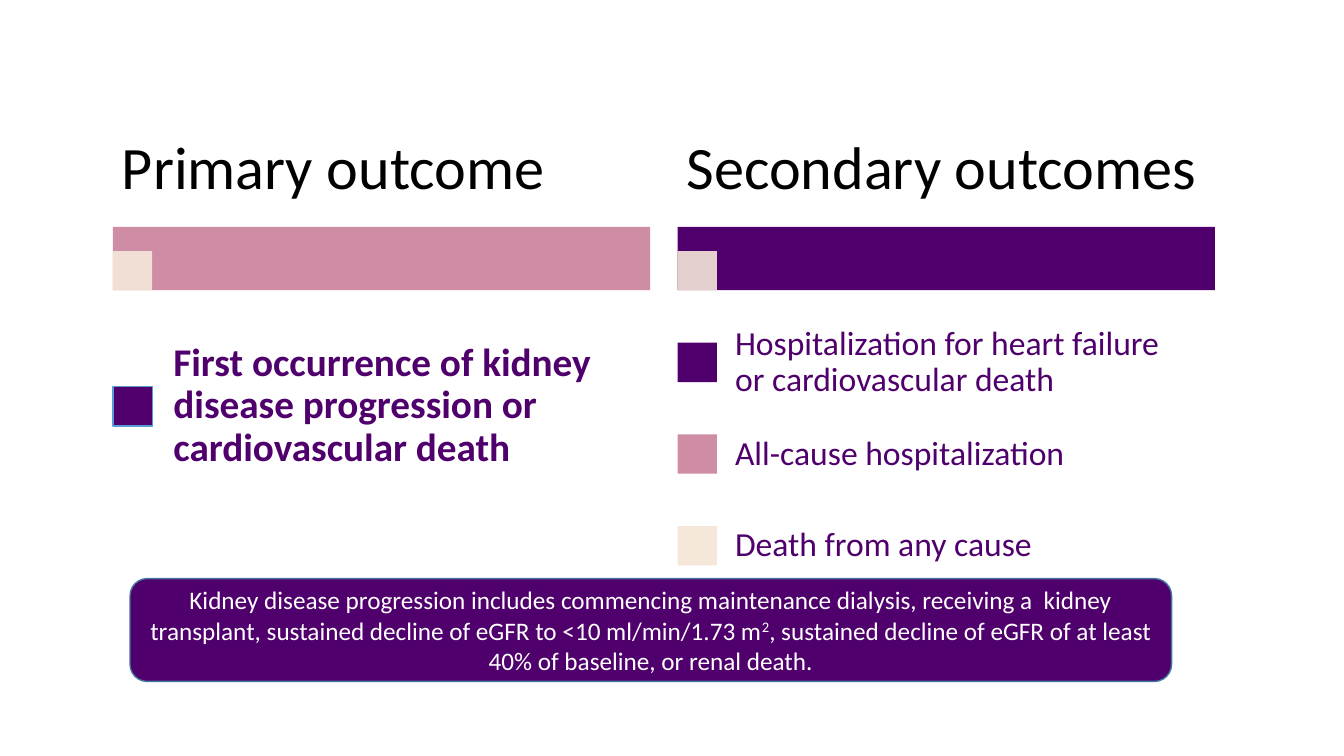
from lxml import etree
from pptx import Presentation
from pptx.dml.color import RGBColor
from pptx.enum import shapes, text
from pptx.oxml.ns import qn
from pptx.util import Inches, Pt

PURPLE = RGBColor(0x50, 0x00, 0x6C)
PINK = RGBColor(0xCE, 0x8C, 0xA5)
CREAM = RGBColor(0xF5, 0xE8, 0xDA)
BLUE = RGBColor(0x5B, 0x9B, 0xD5)
DARK_BLUE = RGBColor(0x43, 0x73, 0x9E)
BLACK = RGBColor(0, 0, 0)
WHITE = RGBColor(0xFF, 0xFF, 0xFF)

COLUMN_WIDTH = 5.33
HEADING_HEIGHT = 1.13
BAR_HEIGHT = 0.63
MARKER = 0.39
ITEMS_OFFSET = 2.02
ITEM_INDENT = 0.38


def add_block(slide, box, fill, line=None, kind=shapes.MSO_SHAPE.RECTANGLE, opacity=100):
    shape = slide.shapes.add_shape(kind, *map(Inches, box))
    shape.shadow.inherit = False
    shape.fill.solid()
    shape.fill.fore_color.rgb = fill
    if opacity < 100:
        color = shape.fill._xPr.find(qn("a:solidFill"))[0]
        etree.SubElement(color, qn("a:alpha")).set("val", str(opacity * 1000))
    if line is None:
        shape.line.fill.background()
    else:
        shape.line.color.rgb = line
        shape.line.width = Pt(1)
    return shape


def format_run(run, size, color, bold=False):
    run.font.name = "Calibri"
    run.font.size = Pt(size)
    run.font.color.rgb = color
    run.font.bold = bold


def add_label(slide, box, words, size, color, insets, bold=False):
    frame = slide.shapes.add_textbox(*map(Inches, box)).text_frame
    frame.word_wrap = True
    frame.vertical_anchor = text.MSO_ANCHOR.MIDDLE
    frame.margin_left = frame.margin_right = Inches(insets[0])
    frame.margin_top = frame.margin_bottom = Inches(insets[1])
    paragraph = frame.paragraphs[0]
    paragraph.text = words
    paragraph.line_spacing = 0.9
    format_run(paragraph.runs[0], size, color, bold)


def add_outcome_column(slide, left, top, heading, bar_color, items, item_height,
                       size, inset, bold=False):
    """Place a heading, its bar and the marked items; items hold words, fill and line."""
    bar_top = top + HEADING_HEIGHT
    add_block(slide, (left, bar_top, COLUMN_WIDTH, BAR_HEIGHT), bar_color)
    add_block(slide, (left, bar_top + BAR_HEIGHT - MARKER, MARKER, MARKER), CREAM, opacity=90)
    add_label(slide, (left, top, COLUMN_WIDTH, HEADING_HEIGHT), heading, 43, BLACK, (0.09, 0.06))
    for index, (words, fill, line) in enumerate(items):
        item_top = top + ITEMS_OFFSET + index * item_height
        marker_top = item_top + (item_height - MARKER) / 2
        add_block(slide, (left, marker_top, MARKER, MARKER), fill, line)
        add_label(slide, (left + ITEM_INDENT, item_top, COLUMN_WIDTH - ITEM_INDENT, item_height),
                  words, size, PURPLE, (inset, inset), bold)


def add_definition(slide, box):
    shape = add_block(slide, box, PURPLE, DARK_BLUE, shapes.MSO_SHAPE.ROUNDED_RECTANGLE)
    frame = shape.text_frame
    frame.word_wrap = True
    frame.vertical_anchor = text.MSO_ANCHOR.MIDDLE
    paragraph = frame.paragraphs[0]
    paragraph.alignment = text.PP_ALIGN.CENTER
    for words in (
        "Kidney disease progression includes commencing maintenance dialysis, receiving a  kidney "
        "transplant, sustained decline of eGFR to <10 ml/min/1.73 m",
        "2",
        ", sustained decline of eGFR of at least 40% of baseline, or renal death.",
    ):
        run = paragraph.add_run()
        run.text = words
        format_run(run, 18, WHITE)
    paragraph.runs[1].font._element.set("baseline", "30000")


def main():
    presentation = Presentation()
    presentation.slide_width = Inches(13.33)
    presentation.slide_height = Inches(7.5)
    slide = presentation.slides.add_slide(presentation.slide_layouts[6])
    primary = [("First occurrence of kidney disease progression or cardiovascular death",
                PURPLE, BLUE)]
    secondary = [
        ("Hospitalization for heart failure or cardiovascular death", PURPLE, None),
        ("All-cause hospitalization", PINK, None),
        ("Death from any cause", CREAM, None),
    ]
    add_outcome_column(slide, 1.12, 1.12, "Primary outcome", PINK, primary, 1.78, 28, 0.22, True)
    add_outcome_column(slide, 6.72, 1.12, "Secondary outcomes", PURPLE, secondary, 0.91, 24, 0.19)
    add_definition(slide, (1.29, 5.74, 10.33, 1.02))
    presentation.save("out.pptx")


if __name__ == "__main__":
    main()
